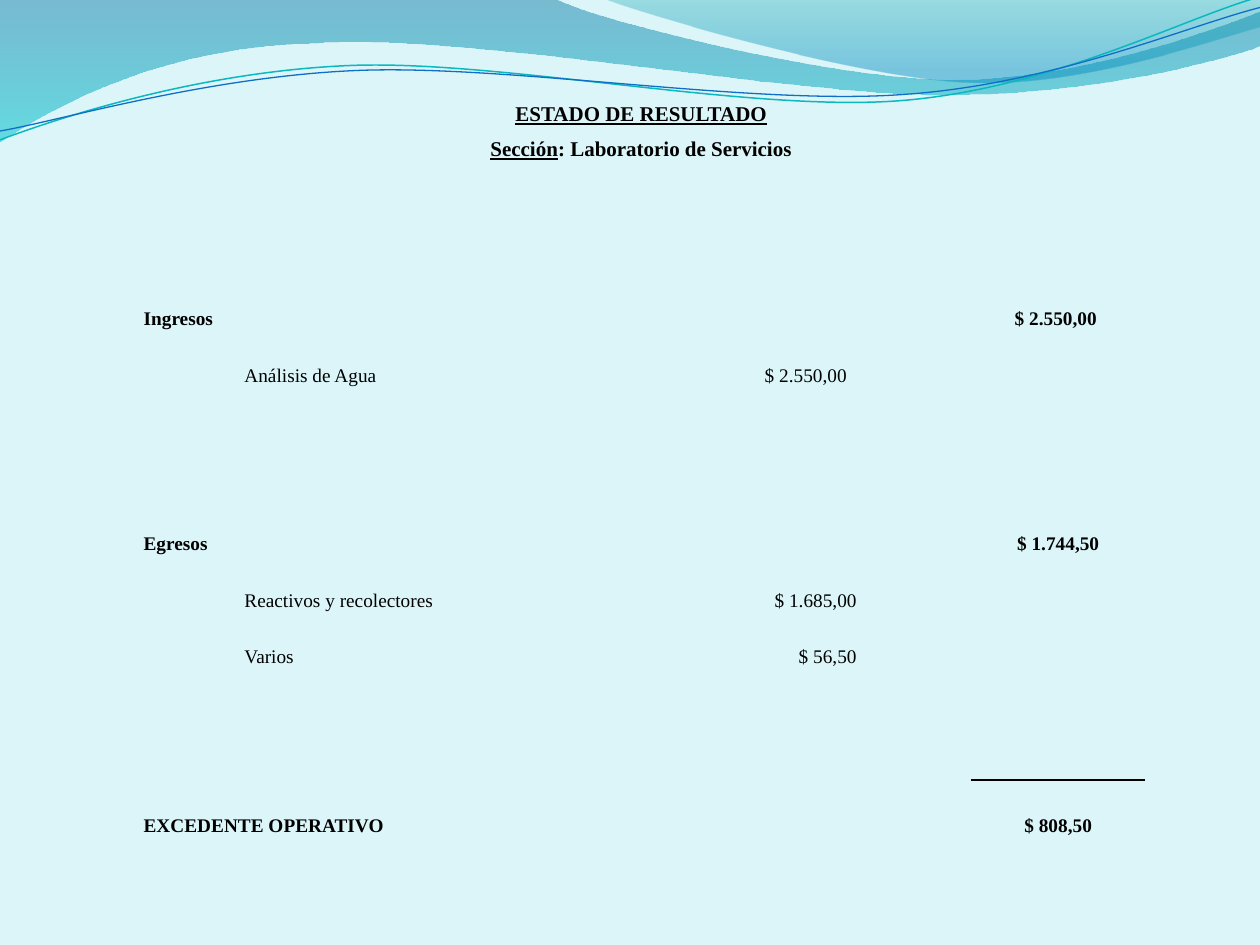
from math import cos, radians, sin

from lxml import etree
from pptx import Presentation
from pptx.dml.color import RGBColor
from pptx.enum.text import MSO_ANCHOR, PP_ALIGN
from pptx.oxml.ns import qn
from pptx.util import Inches, Pt

LEFT, CENTER, RIGHT = PP_ALIGN.LEFT, PP_ALIGN.CENTER, PP_ALIGN.RIGHT
BOTTOM = MSO_ANCHOR.BOTTOM
FONT = "Times New Roman"
NO_STYLE = "{2D5ABB26-0587-4C30-8999-92F81FD0307C}"
COLORS = {
    "background": "DBF5F9", "text": "000000",
    "wave_top": "0074A1", "wave_bottom": "00C6CF",
    "crest_top": "00A1A9", "crest_bottom": "008BBF",
    "teal_line": "0AB8BF", "blue_line": "0F6FC6",
}
TILT = -2.7

# Each path is a start point, then points (2 numbers) or Bezier curves (6 numbers)
WAVE = [(0, 0), (4.4, -0.01),
        (4.76, 0.17, 6.64, 0.63, 7.58, 0.63), (8.53, 0.63, 9.58, 0.26, 10, 0.09),
        (10.01, 0.36),
        (9.83, 0.44, 8.7, 0.76, 7.46, 0.75), (6.22, 0.75, 3.82, 0.28, 2.57, 0.34),
        (1.29, 0.36, 0.46, 0.83, -0.01, 1.13), (0, 0)]
CREST = [(4.79, -0.01), (5.09, 0.11, 6.82, 0.62, 7.69, 0.65),
         (8.56, 0.69, 9.61, 0.32, 10, 0.21), (10, 0), (4.79, -0.01)]
TEAL_LINE = [(0, 1.11), (0.48, 0.93, 1.58, 0.57, 2.77, 0.52),
             (3.95, 0.47, 5.93, 0.89, 7.13, 0.8), (8.33, 0.71, 9.38, 0.15, 9.98, -0.02)]
BLUE_LINE = [(0, 1.04), (0.47, 0.96, 1.64, 0.61, 2.83, 0.56),
             (4.03, 0.51, 5.97, 0.84, 7.17, 0.75), (8.36, 0.67, 9.41, 0.21, 10, 0.06)]

# Statement table
COLUMN_WIDTHS = [0.8, 1.56, 0.17, 0.1, 0.18, 0.37, 1.34, 1.2, 0.86, 1.38]
TABLE_HEIGHT, HEADER_HEIGHT, ROW_COUNT = 6.25, 0.89, 13
ITEM_COLUMN, AMOUNT_COLUMN, TOTAL_COLUMN = 1, 7, 9
RULE_ROW, RESULT_ROW = 11, 12
# row, label, last label column, amount, extra right inset
TOTALS = [(3, "Ingresos", 1, "$ 2.550,00 ", 0),
          (7, "Egresos", 1, "$ 1.744,50", 0),
          (RESULT_ROW, "EXCEDENTE OPERATIVO", 3, "$ 808,50", 0)]
ITEMS = [(4, "Análisis de Agua", 5, "$ 2.550,00 ", 0.04),
         (8, "Reactivos y recolectores", 5, "$ 1.685,00", 0),
         (9, "Varios", 3, "$ 56,50", 0)]
# first column, last column, rows of the merged empty cells
EMPTY_SPANS = [(3, 5, (1, 2, 3, 5, 6, 7)), (1, 3, (10, 11))]


def color(name):
    return RGBColor.from_string(COLORS[name])


def turn(path, center, degrees):
    """Turn every point of a path clockwise about a center."""
    cosine, sine = cos(radians(degrees)), sin(radians(degrees))
    turned = []
    for segment in path:
        values = []
        for x, y in zip(segment[::2], segment[1::2]):
            across, down = x - center[0], y - center[1]
            values += [center[0] + across * cosine - down * sine,
                       center[1] + across * sine + down * cosine]
        turned.append(tuple(values))
    return turned


def add_outline(slide, path, close):
    """Build a freeform, then join each three points of a curve into a Bezier."""
    points = [(Inches(x), Inches(y)) for segment in path
              for x, y in zip(segment[::2], segment[1::2])]
    builder = slide.shapes.build_freeform(*points[0])
    builder.add_line_segments(points[1:], close=close)
    shape = builder.convert_to_shape()
    shape.shadow.inherit = False
    steps = iter(list(shape._element.iter(qn("a:lnTo"))))
    for segment in path[1:]:
        first = next(steps)
        if len(segment) == 6:
            first.tag = qn("a:cubicBezTo")
            for step in (next(steps), next(steps)):
                first.append(step[0])
                step.getparent().remove(step)
    return shape


def add_wave(slide, path, stops):
    """Add a band with a downward gradient; stops are colour, position, opacity."""
    shape = add_outline(slide, path, True)
    shape.line.fill.background()
    shape.fill.gradient()
    shape.fill.gradient_angle = 270
    for stop, (name, position, _) in zip(shape.fill.gradient_stops, stops):
        stop.color.rgb = color(name)
        stop.position = position
    tints = shape._element.spPr.iter(qn("a:srgbClr"))
    for tint, (_, _, opacity) in zip(list(tints), stops):
        etree.SubElement(tint, qn("a:alpha"), val=str(opacity * 1000))


def add_curve(slide, path, center, name, width):
    """Add a tilted line: its outline is level, and the shape is rotated."""
    shape = add_outline(slide, turn(path, center, -TILT), False)
    shape.rotation = TILT
    shape.fill.background()
    shape.line.color.rgb = color(name)
    shape.line.width = Pt(width)


def write_paragraph(paragraph, runs, size, bold, alignment):
    """Write runs given as pairs of text and underline."""
    paragraph.alignment = alignment
    paragraph.line_spacing = 1.5
    for text, underline in runs:
        run = paragraph.add_run()
        run.text = text
        run.font.name = FONT
        run.font.size = Pt(size)
        run.font.bold = bold
        run.font.underline = underline
        run.font.color.rgb = color("text")


def add_border(cell, side):
    line = etree.Element(qn("a:" + side), w=str(Pt(1)))
    fill = etree.SubElement(line, qn("a:solidFill"))
    etree.SubElement(fill, qn("a:srgbClr"), val=COLORS["text"])
    cell._tc.get_or_add_tcPr().insert(0, line)


def add_entry(table, entry, label_column, amount_column, bold, alignment):
    row, label, last_column, amount, inset = entry
    label_cell = table.cell(row, label_column)
    label_cell.merge(table.cell(row, last_column))
    amount_cell = table.cell(row, amount_column)
    amount_cell.margin_right = Inches(0.05 + inset)
    for cell, text, side in ((label_cell, label, LEFT), (amount_cell, amount, alignment)):
        paragraph = cell.text_frame.paragraphs[0]
        write_paragraph(paragraph, [(text, False)], 11, bold, side)


def add_statement(slide):
    frame = slide.shapes.add_table(ROW_COUNT, len(COLUMN_WIDTHS), Inches(1.09), Inches(0.39),
                                   Inches(sum(COLUMN_WIDTHS)), Inches(TABLE_HEIGHT))
    table = frame.table
    table.first_row = table.horz_banding = False
    table._tbl.tblPr.find(qn("a:tableStyleId")).text = NO_STYLE
    for column, width in zip(table.columns, COLUMN_WIDTHS):
        column.width = Inches(width)
    for row in table.rows:
        row.height = Inches((TABLE_HEIGHT - HEADER_HEIGHT) / (ROW_COUNT - 1))
    table.rows[0].height = Inches(HEADER_HEIGHT)
    for cell in table.iter_cells():
        cell.fill.background()
        cell.vertical_anchor = BOTTOM
        cell.margin_left = cell.margin_right = Inches(0.05)
        cell.margin_top = cell.margin_bottom = 0
    for first, last, rows in EMPTY_SPANS:
        for row in rows:
            table.cell(row, first).merge(table.cell(row, last))

    # Heading across all columns
    heading = table.cell(0, 0)
    heading.merge(table.cell(0, len(COLUMN_WIDTHS) - 1))
    text_frame = heading.text_frame
    write_paragraph(text_frame.paragraphs[0], [("ESTADO DE RESULTADO", True)], 12, True, CENTER)
    write_paragraph(text_frame.add_paragraph(),
                    [("Sección", True), (": Laboratorio de Servicios", False)], 12, True, CENTER)

    # Totals and their items
    for entry in TOTALS:
        add_entry(table, entry, 0, TOTAL_COLUMN, True, CENTER)
    for entry in ITEMS:
        add_entry(table, entry, ITEM_COLUMN, AMOUNT_COLUMN, False, RIGHT)

    # Rule above the result
    add_border(table.cell(RULE_ROW, TOTAL_COLUMN), "lnB")
    add_border(table.cell(RESULT_ROW, TOTAL_COLUMN), "lnT")


def main():
    presentation = Presentation()
    presentation.slide_width, presentation.slide_height = Inches(10), Inches(7.5)
    slide = presentation.slides.add_slide(presentation.slide_layouts[6])
    slide.background.fill.solid()
    slide.background.fill.fore_color.rgb = color("background")

    # Waves along the top edge
    add_wave(slide, WAVE, [("wave_top", 0, 45), ("wave_bottom", 1, 55)])
    add_wave(slide, CREST, [("crest_top", 0, 30), ("crest_bottom", 0.8, 45)])
    add_curve(slide, TEAL_LINE, (4.99, 0.58), "teal_line", 0.85)
    add_curve(slide, BLUE_LINE, (5, 0.59), "blue_line", 0.75)

    add_statement(slide)
    presentation.save("out.pptx")


if __name__ == "__main__":
    main()
